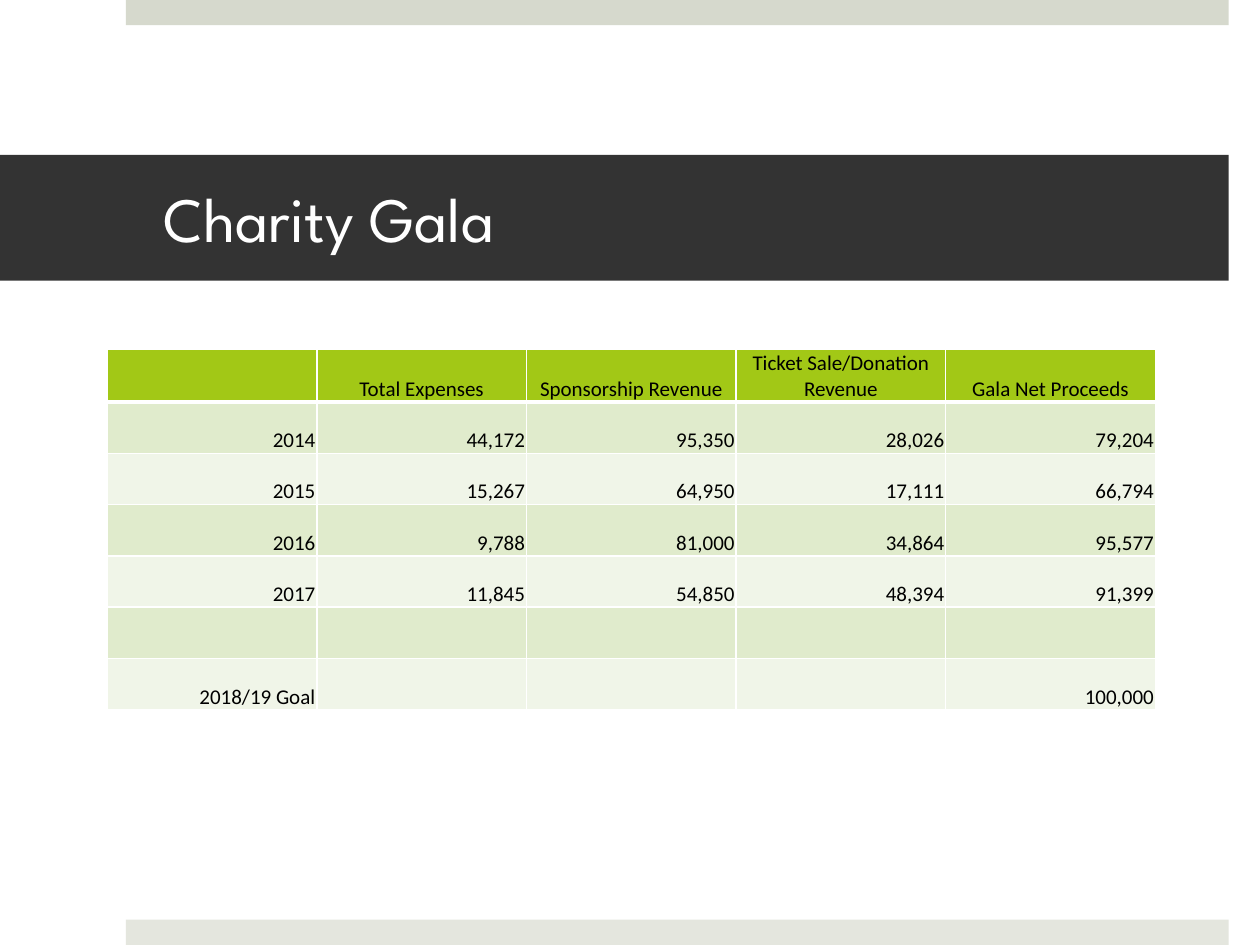
from lxml import etree
from pptx import Presentation
from pptx.dml.color import RGBColor
from pptx.enum.shapes import MSO_SHAPE
from pptx.enum.text import MSO_ANCHOR, PP_ALIGN
from pptx.oxml.ns import qn
from pptx.util import Cm, Pt

RECT = MSO_SHAPE.RECTANGLE
MIDDLE, BOTTOM = MSO_ANCHOR.MIDDLE, MSO_ANCHOR.BOTTOM
LEFT, CENTER, RIGHT = PP_ALIGN.LEFT, PP_ALIGN.CENTER, PP_ALIGN.RIGHT

HEADER_FILL, BAND_FILLS = "A2C816", ["E0EBCC", "F0F5E8"]
ROWS = [
    ["", "Total Expenses", "Sponsorship Revenue", "Ticket Sale/Donation Revenue", "Gala Net Proceeds"],
    ["2014", "44,172", "95,350", "28,026", "79,204"],
    ["2015", "15,267", "64,950", "17,111", "66,794"],
    ["2016", "9,788", "81,000", "34,864", "95,577"],
    ["2017", "11,845", "54,850", "48,394", "91,399"],
    ["", "", "", "", ""],
    ["2018/19 Goal", "", "", "", "100,000"],
]


def paint(target, color):
    """Give a fill or a font a solid colour."""
    if hasattr(target, "solid"):
        target.solid()
        target.fore_color.rgb = RGBColor.from_string(color)
    else:
        target.color.rgb = RGBColor.from_string(color)


def add_border(cell, side, points):
    """Draw one white cell border; call before the cell is filled."""
    ln = etree.SubElement(cell._tc.get_or_add_tcPr(), qn(f"a:ln{side}"), w=str(Pt(points)))
    fill = etree.SubElement(ln, qn("a:solidFill"))
    etree.SubElement(fill, qn("a:srgbClr"), val="FFFFFF")


prs = Presentation()
prs.slide_width, prs.slide_height = Cm(25.4), Cm(19.05)
s = prs.slides.add_slide(prs.slide_layouts[5])

# Bars at the top and bottom edges
for top, color in [(0, "D6D9CD"), (18.54, "E4E6DE")]:
    sp = s.shapes.add_shape(RECT, Cm(2.54), Cm(top), Cm(22.23), Cm(0.51))
    sp.shadow.inherit = False
    sp.line.fill.background()
    paint(sp.fill, color)

# Title band
title = s.shapes.title
title.left, title.top, title.width, title.height = Cm(0), Cm(3.12), Cm(24.77), Cm(2.54)
paint(title.fill, "333333")
tf = title.text_frame
for name, value in {"margin_left": Cm(3.3), "margin_right": Cm(0.76), "margin_top": Cm(0.13),
                    "margin_bottom": Cm(0.13), "vertical_anchor": MIDDLE, "word_wrap": True}.items():
    setattr(tf, name, value)
p = tf.paragraphs[0]
p.alignment = LEFT
r = p.add_run()
r.text = "Charity Gala"
r.font.name, r.font.size = "League Spartan", Pt(36)
paint(r.font, "FFFFFF")

# Revenue table
frame = s.shapes.add_table(len(ROWS), len(ROWS[0]), Cm(2.16), Cm(7.04), Cm(21.13), Cm(7.24))
table = frame.table
cell_format = {"margin_left": Cm(0.03), "margin_right": Cm(0.03), "margin_top": Cm(0.03),
               "margin_bottom": Cm(0), "vertical_anchor": BOTTOM}
for i, row in enumerate(ROWS):
    for j, text in enumerate(row):
        cell = table.cell(i, j)
        for name, value in cell_format.items():
            setattr(cell, name, value)
        for side in "LRTB":
            under_header = (i, side) in [(0, "B"), (1, "T")]
            add_border(cell, side, 3 if under_header else 1)
        paint(cell.fill, BAND_FILLS[(i - 1) % 2] if i else HEADER_FILL)
        if text:
            p = cell.text_frame.paragraphs[0]
            p.alignment = RIGHT if i else CENTER
            r = p.add_run()
            r.text = text
            r.font.name, r.font.size, r.font.bold = "Calibri", Pt(12), False
            paint(r.font, "000000")

prs.save("out.pptx")
